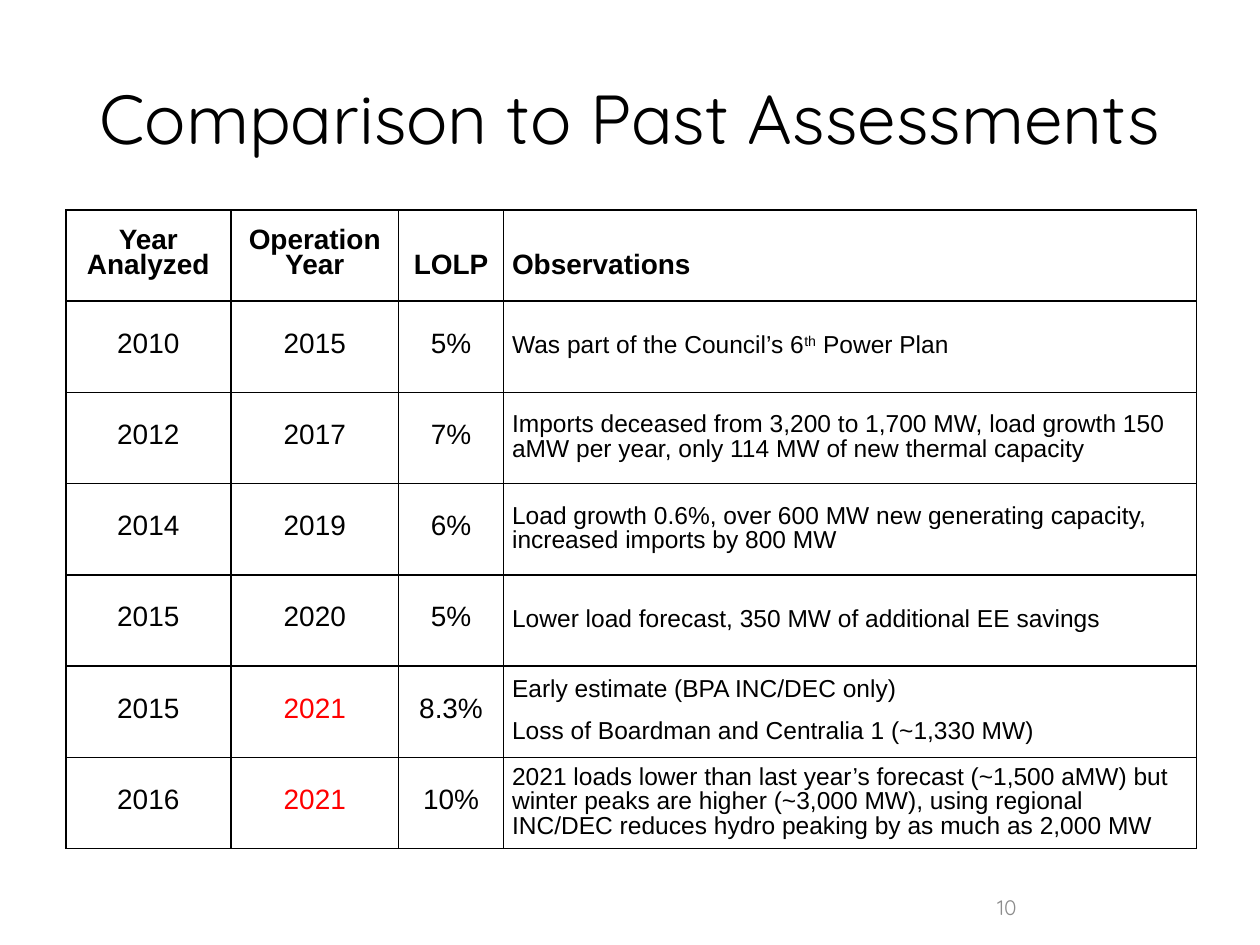
from dataclasses import dataclass

from lxml import etree
from pptx import Presentation
from pptx.dml.color import RGBColor
from pptx.enum.text import MSO_ANCHOR, PP_ALIGN
from pptx.oxml.ns import qn
from pptx.util import Pt

CENTER, LEFT, RIGHT = PP_ALIGN.CENTER, PP_ALIGN.LEFT, PP_ALIGN.RIGHT
MIDDLE = MSO_ANCHOR.MIDDLE

BLACK = RGBColor(0x00, 0x00, 0x00)
RED = RGBColor(0xFF, 0x00, 0x00)
GRAY = RGBColor(0x8C, 0x8C, 0x8C)

COLUMN_WIDTHS = (94.3, 96, 59.8, 396.2)
ROW_HEIGHT = 52.15
LINE_HEIGHT = 14
HIGHLIGHTED_YEAR = "2021"
HEADINGS = ("Year Analyzed", "Operation Year", "LOLP", "Observations")
SINGLE_LINE_HEADINGS = HEADINGS[2:]


@dataclass(frozen=True)
class Assessment:
    analyzed: str
    operation: str
    lolp: str
    observations: tuple[str, ...]


ASSESSMENTS = (
    Assessment("2010", "2015", "5%", ("Was part of the Council’s 6^th^ Power Plan",)),
    Assessment("2012", "2017", "7%", (
        "Imports deceased from 3,200 to 1,700 MW, load growth 150 aMW per year, "
        "only 114 MW of new thermal capacity",)),
    Assessment("2014", "2019", "6%", (
        "Load growth 0.6%, over 600 MW new generating capacity, "
        "increased imports by 800 MW",)),
    Assessment("2015", "2020", "5%", (
        "Lower load forecast, 350 MW of additional EE savings",)),
    Assessment("2015", "2021", "8.3%", (
        "Early estimate (BPA INC/DEC only)",
        "Loss of Boardman and Centralia 1 (~1,330 MW)")),
    Assessment("2016", "2021", "10%", (
        "2021 loads lower than last year’s forecast (~1,500 aMW) but winter peaks "
        "are higher (~3,000 MW), using regional INC/DEC reduces hydro peaking by "
        "as much as 2,000 MW",)),
)


def write_text(frame, *lines: str, size: float, font="Arial", color=BLACK,
               bold=False, align=CENTER, line_height=None, space_after=0) -> None:
    """Write one paragraph per line; text between carets is superscript."""
    frame.word_wrap = True
    for index, line in enumerate(lines):
        paragraph = frame.add_paragraph() if index else frame.paragraphs[0]
        paragraph.alignment = align
        paragraph.space_after = Pt(space_after)
        if line_height:
            paragraph.line_spacing = Pt(line_height)
        for piece, text in enumerate(line.split("^")):
            run = paragraph.add_run()
            run.text = text
            run.font.name = font
            run.font.size = Pt(size)
            run.font.bold = bold
            run.font.color.rgb = color
            if piece % 2:
                run.font._element.set("baseline", "30000")


def add_label(slide, left: float, top: float, width: float, height: float,
              text: str, **text_format) -> None:
    frame = slide.shapes.add_textbox(Pt(left), Pt(top), Pt(width), Pt(height)).text_frame
    frame.vertical_anchor = MIDDLE
    write_text(frame, text, **text_format)


def add_borders(cell) -> None:
    properties = cell._tc.get_or_add_tcPr()
    for position, side in enumerate(("lnL", "lnR", "lnT", "lnB")):
        border = etree.Element(qn(f"a:{side}"), w=str(Pt(1)))
        fill = etree.SubElement(border, qn("a:solidFill"))
        etree.SubElement(fill, qn("a:srgbClr"), val=str(BLACK))
        properties.insert(position, border)


def fill_cell(cell, *lines: str, margin_top=0, **text_format) -> None:
    cell.fill.background()
    add_borders(cell)
    cell.vertical_anchor = MIDDLE
    cell.margin_left = cell.margin_right = Pt(5)
    cell.margin_top, cell.margin_bottom = Pt(margin_top), Pt(0)
    write_text(cell.text_frame, *lines, line_height=LINE_HEIGHT, space_after=10,
               **text_format)


def add_assessment_table(slide, left: float, top: float) -> None:
    row_count = len(ASSESSMENTS) + 1
    table = slide.shapes.add_table(
        row_count, len(HEADINGS), Pt(left), Pt(top),
        Pt(sum(COLUMN_WIDTHS)), Pt(ROW_HEIGHT * row_count)).table
    table.horz_banding = False
    for column, width in zip(table.columns, COLUMN_WIDTHS):
        column.width = Pt(width)
    for row in table.rows:
        row.height = Pt(ROW_HEIGHT)

    for column, heading in enumerate(HEADINGS):
        fill_cell(table.cell(0, column), heading, size=16, bold=True,
                  align=LEFT if heading == "Observations" else CENTER,
                  margin_top=LINE_HEIGHT if heading in SINGLE_LINE_HEADINGS else 0)
    for row, item in enumerate(ASSESSMENTS, start=1):
        for column, value in enumerate((item.analyzed, item.operation, item.lolp)):
            fill_cell(table.cell(row, column), value, size=16,
                      color=RED if value == HIGHLIGHTED_YEAR else BLACK)
        fill_cell(table.cell(row, 3), *item.observations, size=14, align=LEFT)


def main() -> None:
    presentation = Presentation()
    presentation.slide_width, presentation.slide_height = Pt(720), Pt(540)
    slide = presentation.slides.add_slide(presentation.slide_layouts[6])
    add_label(slide, 36, 21.6, 648, 90, "Comparison to Past Assessments",
              size=39.6, font="Quicksand")
    add_assessment_table(slide, 37.6, 120)
    add_label(slide, 420, 504, 168, 28.8, "10",
              size=12, font="Quicksand", color=GRAY, align=RIGHT)
    presentation.save("out.pptx")


if __name__ == "__main__":
    main()
